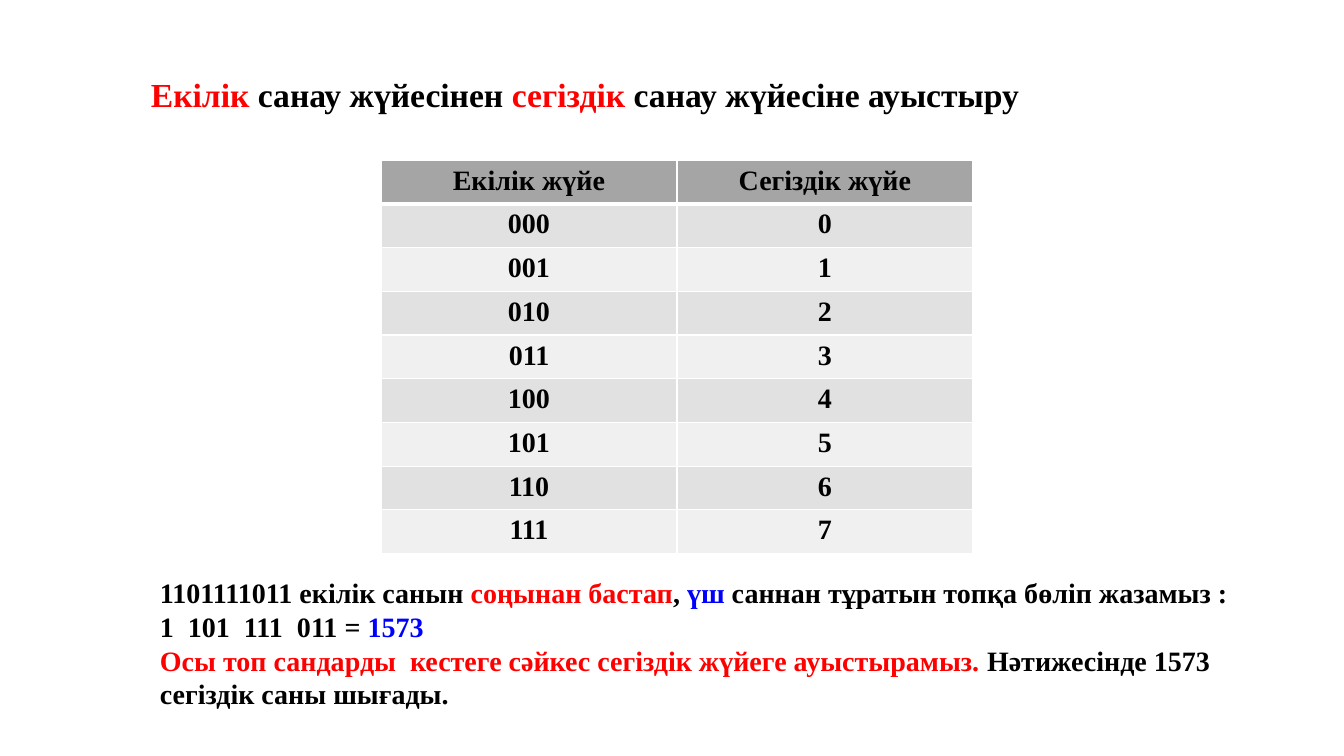
from lxml import etree
from pptx import Presentation
from pptx.dml.color import RGBColor
from pptx.enum.text import MSO_ANCHOR, MSO_AUTO_SIZE, PP_ALIGN
from pptx.oxml.ns import qn
from pptx.util import Pt

CENTER = PP_ALIGN.CENTER
TOP, MIDDLE = MSO_ANCHOR.TOP, MSO_ANCHOR.MIDDLE
GROW = MSO_AUTO_SIZE.SHAPE_TO_FIT_TEXT
EMU_PER_PX = 914400 / 100.8
COLORS = {
    "black": "000000", "red": "FF0000", "blue": "0000FF", "white": "FFFFFF",
    "header": "A5A5A5", "odd": "E1E1E1", "even": "F0F0F0",
}

TITLE = [[("Екілік", "red"), (" санау жүйесінен ", "black"),
          ("сегіздік", "red"), (" санау жүйесіне ауыстыру", "black")]]
EXAMPLE = [
    [("1101111011 екілік санын ", "black"), ("соңынан бастап", "red"),
     (", ", "black"), ("үш", "blue"),
     (" саннан тұратын топқа бөліп жазамыз : 1  101  111  011 = ", "black"),
     ("1573", "blue")],
    [("Осы топ сандарды  кестеге сәйкес сегіздік жүйеге ауыстырамыз. ", "red"),
     ("Нәтижесінде 1573 сегіздік саны шығады.", "black")],
]
DIGITS = [("Екілік жүйе", "Сегіздік жүйе")]
DIGITS += [(f"{digit:03b}", str(digit)) for digit in range(8)]


def px(length):
    """Turn pixels into EMU."""
    return round(length * EMU_PER_PX)


def rgb(name):
    """Look up a named colour."""
    return RGBColor.from_string(COLORS[name])


class Page:
    """Draws styled elements on one slide."""

    def __init__(self, deck, font):
        """Add a blank slide to the deck."""
        self.slide = deck.slides.add_slide(deck.slide_layouts[6])
        self.font = font

    def style(self, para, size):
        """Set the bold page font on a paragraph."""
        para.font.name = self.font
        para.font.size = Pt(size)
        para.font.bold = True

    def text(self, left, top, width, height, paragraphs, size, anchor=TOP, spacing=None):
        """Add a text box of coloured spans and return its frame."""
        box = self.slide.shapes.add_textbox(px(left), px(top), px(width), px(height))
        frame = box.text_frame
        frame.word_wrap = True
        frame.vertical_anchor = anchor
        for index, spans in enumerate(paragraphs):
            para = frame.add_paragraph() if index else frame.paragraphs[0]
            self.style(para, size)
            para.line_spacing = spacing
            for words, color in spans:
                span = para.add_run()
                span.text = words
                span.font.color.rgb = rgb(color)
        return frame

    def border(self, cell, bottom):
        """Draw white borders round a cell, the bottom one in its own width."""
        properties = cell._tc.get_or_add_tcPr()
        for side, width in (("L", 1), ("R", 1), ("T", 1), ("B", bottom)):
            line = etree.SubElement(properties, qn(f"a:ln{side}"), w=str(Pt(width)))
            fill = etree.SubElement(line, qn("a:solidFill"))
            etree.SubElement(fill, qn("a:srgbClr"), val=COLORS["white"])

    def table(self, left, top, column_width, row_height, rows, size):
        """Add a centred table with a header and alternating rows."""
        columns = len(rows[0])
        table = self.slide.shapes.add_table(
            len(rows), columns, px(left), px(top),
            px(column_width * columns), px(row_height * len(rows))).table
        for row, values in enumerate(rows):
            shade = "header" if row == 0 else "odd" if row % 2 else "even"
            for column, value in enumerate(values):
                cell = table.cell(row, column)
                cell.text = value
                para = cell.text_frame.paragraphs[0]
                para.alignment = CENTER
                self.style(para, size)
                para.font.color.rgb = rgb("black")
                self.border(cell, 1 if row else 3)
                cell.fill.solid()
                cell.fill.fore_color.rgb = rgb(shade)


def main():
    """Build the slide and save it."""
    deck = Presentation()
    deck.slide_width, deck.slide_height = px(1344), px(756)
    page = Page(deck, "Times New Roman")
    page.text(141, 34, 1042, 126, TITLE, 24, MIDDLE, 0.9)
    page.table(381, 160, 296, 41, DIGITS, 20)
    page.text(150, 571, 1097, 146, EXAMPLE, 20).auto_size = GROW
    deck.save("out.pptx")


if __name__ == "__main__":
    main()
